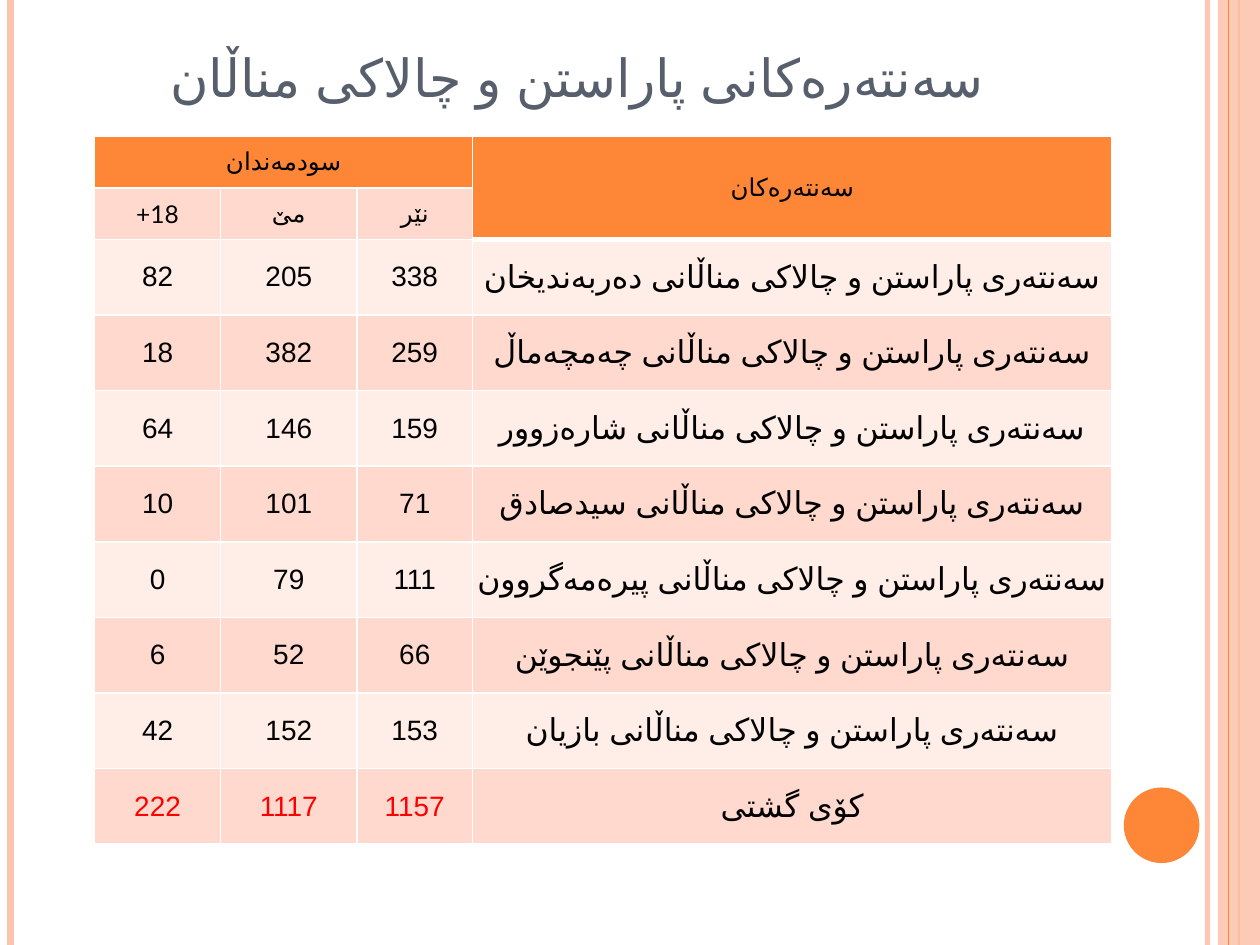
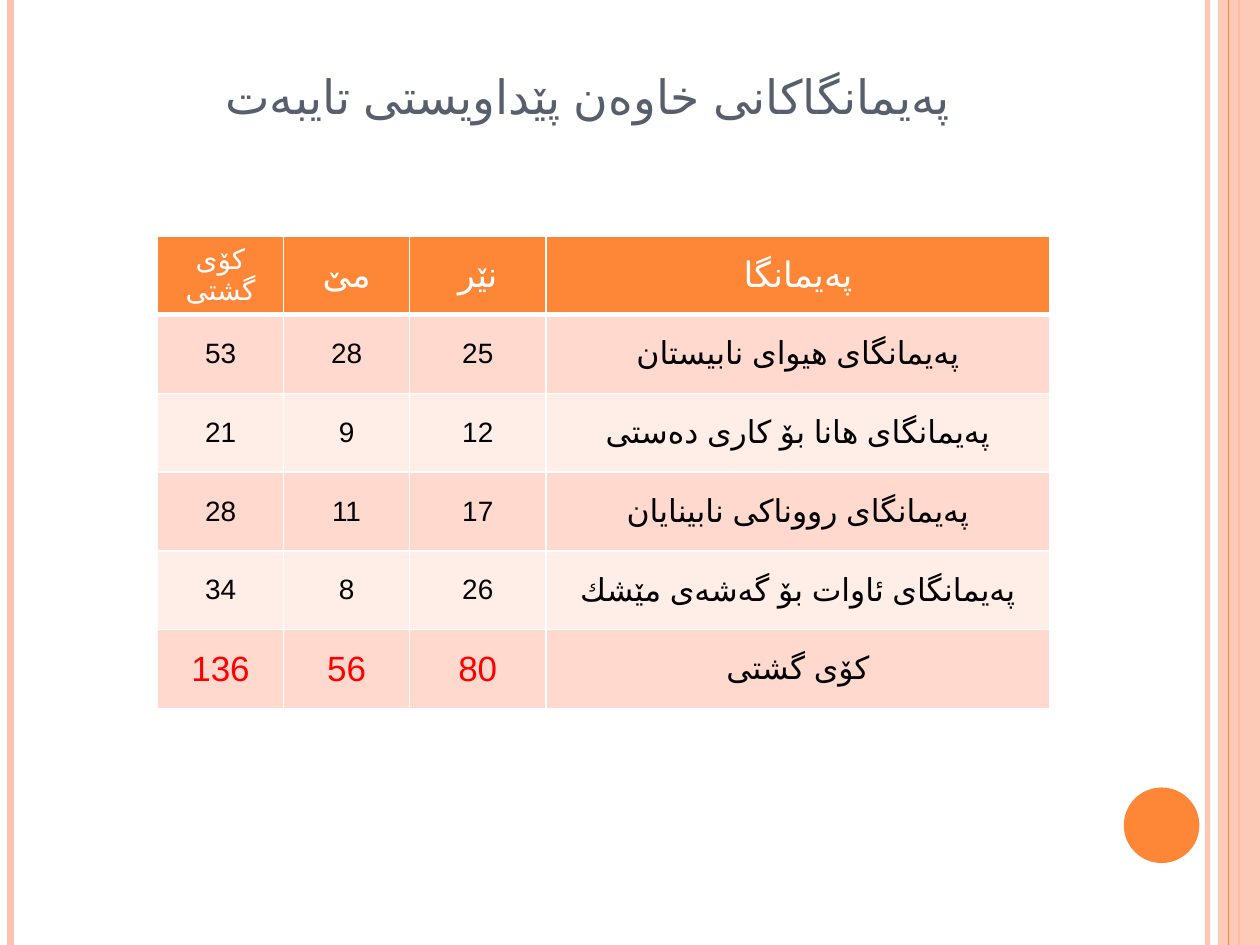
from pptx import Presentation
from pptx.dml.color import RGBColor
from pptx.enum.shapes import MSO_CONNECTOR, MSO_SHAPE
from pptx.enum.text import MSO_ANCHOR, MSO_AUTO_SIZE, PP_ALIGN
from pptx.oxml.ns import qn
from pptx.util import Pt
from lxml import etree

STRAIGHT = MSO_CONNECTOR.STRAIGHT
RECT, OVAL = MSO_SHAPE.RECTANGLE, MSO_SHAPE.OVAL
MIDDLE, BOTTOM = MSO_ANCHOR.MIDDLE, MSO_ANCHOR.BOTTOM
CENTER = PP_ALIGN.CENTER
NO_FIT = MSO_AUTO_SIZE.NONE

W, H = 720, 540
FONT, SCRIPT_FONT, LANG = "Lato", "Arial", "ar-IQ"
TITLE_ONLY = 5
COLORS = {
    "accent": "FE8637", "peach": "FEC3AE", "band": "FFD9CE", "pale": "FFEDE8",
    "title": "575F6D", "white": "FFFFFF", "black": "000000", "total": "FF0000",
}


def rgb(name):
    return RGBColor.from_string(COLORS[name])


def add_alpha(el, percent):
    clr = next(el.iter(qn("a:srgbClr")))
    etree.SubElement(clr, qn("a:alpha"), val=str(percent * 1000))


class Deck:
    def __init__(self):
        self.prs = Presentation()
        self.prs.slide_width, self.prs.slide_height = Pt(W), Pt(H)
        self.s = None

    def new_slide(self):
        self.s = self.prs.slides.add_slide(self.prs.slide_layouts[TITLE_ONLY])
        self.vline(690, "peach", 3, 93)
        self.vline(6, "peach", 4.5)
        self.vline(708, "accent", 1.5)
        self.shape(RECT, 696, 0, 24, H, "peach", 87)
        self.vline(702, "accent", 0.75)
        self.shape(OVAL, 642.2, 450, 43.2, 43.2, "accent")

    def vline(self, x, color, width, alpha=100):
        """Draw a line over the full slide height."""
        ln = self.s.shapes.add_connector(STRAIGHT, Pt(x), 0, Pt(x), Pt(H))
        ln.line.color.rgb = rgb(color)
        ln.line.width = Pt(width)
        sp_pr = ln._element.spPr
        if alpha < 100:
            add_alpha(sp_pr, alpha)
        etree.SubElement(sp_pr, qn("a:effectLst"))

    def shape(self, kind, x, y, w, h, color, alpha=100):
        sp = self.s.shapes.add_shape(kind, Pt(x), Pt(y), Pt(w), Pt(h))
        sp.shadow.inherit = False
        sp.fill.solid()
        sp.fill.fore_color.rgb = rgb(color)
        sp.line.fill.background()
        if alpha < 100:
            add_alpha(sp._element.spPr, alpha)

    def run(self, p, text, size, color):
        p.alignment = CENTER
        r = p.add_run()
        r.text = text
        r.font.size, r.font.name = Pt(size), FONT
        r.font.color.rgb = rgb(color)
        r_pr = r.font._element
        r_pr.set("lang", LANG)
        etree.SubElement(r_pr, qn("a:cs"), typeface=SCRIPT_FONT)
        return r

    def title(self, text, x, y, w, h, size, anchor):
        sp = self.s.shapes.title
        sp.left, sp.top, sp.width, sp.height = Pt(x), Pt(y), Pt(w), Pt(h)
        tf = sp.text_frame
        tf.auto_size, tf.word_wrap = NO_FIT, True
        tf.vertical_anchor = anchor
        r = self.run(tf.paragraphs[0], text, size, "title")
        r.font._element.set("cap", "small")

    def table(self, x, y, widths, heights):
        frame = self.s.shapes.add_table(len(heights), len(widths), Pt(x), Pt(y),
                                        Pt(sum(widths)), Pt(sum(heights)))
        tbl = frame.table
        tbl.first_row = tbl.horz_banding = False
        for col, width in zip(tbl.columns, widths):
            col.width = Pt(width)
        for row, height in zip(tbl.rows, heights):
            row.height = Pt(height)
        return tbl

    def borders(self, cell, top=1, bottom=1):
        """Give the cell white edges; call before filling it."""
        tc_pr = cell._tc.get_or_add_tcPr()
        for tag, width in (("lnL", 1), ("lnR", 1), ("lnT", top), ("lnB", bottom)):
            ln = etree.SubElement(tc_pr, qn("a:" + tag), w=str(Pt(width)))
            fill = etree.SubElement(ln, qn("a:solidFill"))
            etree.SubElement(fill, qn("a:srgbClr"), val=COLORS["white"])

    def cell(self, cell, text, fill, size, color="black", top=1, bottom=1):
        self.borders(cell, top, bottom)
        cell.fill.solid()
        cell.fill.fore_color.rgb = rgb(fill)
        cell.vertical_anchor = MIDDLE
        if text:
            self.run(cell.text_frame.paragraphs[0], text, size, color)

    def body(self, tbl, first, rows, total_size, thick_cols):
        """Fill banded rows; the last one holds the totals."""
        last = len(rows) - 1
        for i, values in enumerate(rows):
            fill = "pale" if (last - i) % 2 else "band"
            for j, value in enumerate(values):
                cell = tbl.cell(first + i, j)
                size, color = 16, "black"
                if j == len(values) - 1:
                    size = 18
                elif i == last:
                    size, color = total_size, "total"
                top = 3 if i == 0 and j in thick_cols else 1
                self.cell(cell, value, fill, size, color, top=top)
                cell.margin_left = cell.margin_right = Pt(2.25)
                cell.margin_top = cell.margin_bottom = Pt(1.5)
                p = cell.text_frame.paragraphs[0]
                p._p.get_or_add_pPr().set("rtl", "1")


def centres_slide(deck):
    deck.new_slide()
    deck.title("سەنتەرەكانی پاراستن و چالاكی مناڵان", 36, 21.6, 588, 44.6, 30, MIDDLE)
    prefix = "سەنتەری پاراستن و چالاكی مناڵانی "
    centres = [
        ("82", "205", "338", "دەربەندیخان"),
        ("18", "382", "259", "چەمچەماڵ"),
        ("64", "146", "159", "شارەزوور"),
        ("10", "101", "71", "سیدصادق"),
        ("0", "79", "111", "پیرەمەگروون"),
        ("6", "52", "66", "پێنجوێن"),
        ("42", "152", "153", "بازیان"),
    ]
    rows = [(*counts, prefix + place) for *counts, place in centres]
    rows.append(("222", "1117", "1157", "كۆی گشتی"))
    tbl = deck.table(54, 78, [72, 78, 66, 365.4], [29.4] * 2 + [43.2] * len(rows))
    tbl.cell(0, 0).merge(tbl.cell(0, 2))
    tbl.cell(0, 3).merge(tbl.cell(1, 3))
    for j, text in enumerate(("سودمەندان", "", "", "سەنتەرەكان")):
        deck.cell(tbl.cell(0, j), text, "accent", 14, bottom=3 if j == 3 else 1)
    for j, text in enumerate(("+18", "مێ", "نێر")):
        deck.cell(tbl.cell(1, j), text, "band", 14)
    deck.cell(tbl.cell(1, 3), "", "accent", 14, bottom=3)
    deck.body(tbl, 2, rows, total_size=16, thick_cols=[3])


def institutes_slide(deck):
    deck.new_slide()
    deck.title("پەیمانگاكانی خاوەن پێداویستی تایبەت", 42, 42, 588, 32.4, 27, BOTTOM)
    rows = [
        ("53", "28", "25", "پەیمانگای هیوای نابیستان"),
        ("21", "9", "12", "پەیمانگای هانا بۆ كاری دەستی"),
        ("28", "11", "17", "پەیمانگای رووناكی نابینایان"),
        ("34", "8", "26", "پەیمانگای ئاوات بۆ گەشەی مێشك"),
        ("136", "56", "80", "كۆی گشتی"),
    ]
    tbl = deck.table(90, 135.2, [72, 72, 78, 288], [44.6] + [45] * len(rows))
    for j, text in enumerate(("كۆی گشتی", "مێ", "نێر", "پەیمانگا")):
        size = 16 if j == 0 else 20
        deck.cell(tbl.cell(0, j), text, "accent", size, "white", bottom=3)
    deck.body(tbl, 1, rows, total_size=20, thick_cols=range(4))


def main():
    deck = Deck()
    centres_slide(deck)
    institutes_slide(deck)
    deck.prs.save("out.pptx")


if __name__ == "__main__":
    main()
